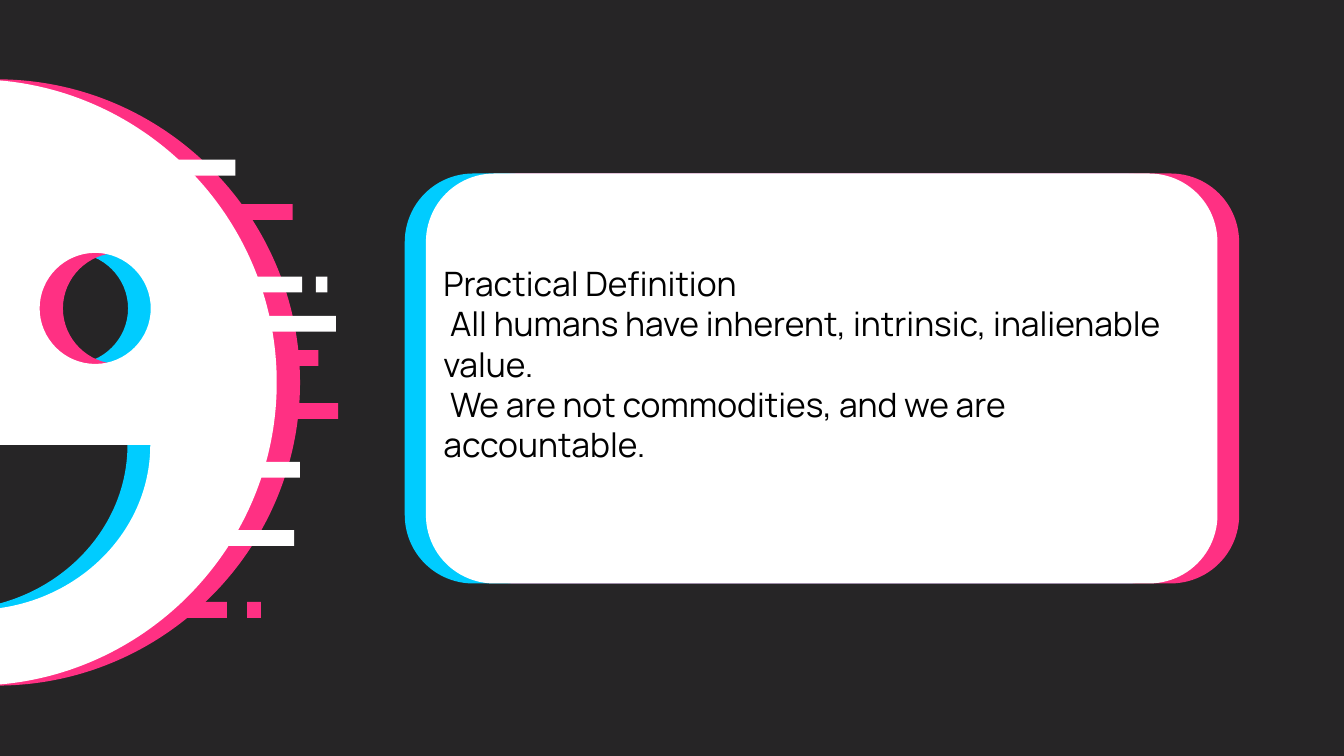
from pptx import Presentation
from pptx.dml.color import RGBColor
from pptx.enum.shapes import MSO_SHAPE
from pptx.enum.text import MSO_ANCHOR, MSO_AUTO_SIZE, PP_ALIGN
from pptx.oxml.ns import qn
from pptx.util import Cm, Pt

RECT = MSO_SHAPE.RECTANGLE
ROUND_RECT = MSO_SHAPE.ROUNDED_RECTANGLE
BOTTOM = MSO_ANCHOR.BOTTOM
NO_AUTOFIT = MSO_AUTO_SIZE.NONE
LEFT = PP_ALIGN.LEFT

THEME = {
    "background": RGBColor.from_string("262526"),
    "blue": RGBColor.from_string("00CCFF"),
    "pink": RGBColor.from_string("FF3083"),
    "white": RGBColor.from_string("FFFFFF"),
    "text": RGBColor.from_string("000000"),
    "font": "Manrope",
    "size": Pt(18),
}


def paint(sp, color):
    sp.shadow.inherit = False
    sp.fill.solid()
    sp.fill.fore_color.rgb = THEME[color]
    sp.line.fill.background()


def arc(cx, cy, rx, ry, quarters=4):
    k = 0.55
    x, y = 1, 0
    unit = [(x, y)]
    for _ in range(quarters):
        unit += [(x - k * y, y + k * x), (k * x - y, k * y + x), (-y, x)]
        x, y = -y, x
    return [(Cm(cx + rx * ux), Cm(cy + ry * uy)) for ux, uy in unit]


prs = Presentation()
prs.slide_width, prs.slide_height = Cm(25.4), Cm(14.29)
slide = prs.slides.add_slide(prs.slide_layouts[0])
slide.background.fill.solid()
slide.background.fill.fore_color.rgb = THEME["background"]
shapes = slide.shapes
title = shapes.title
title.element.getparent().remove(title.element)

for color, left in [("blue", 7.65), ("pink", 8.46), ("white", 8.05)]:
    sp = shapes.add_shape(ROUND_RECT, Cm(left), Cm(3.28), Cm(14.96), Cm(7.75))
    sp.adjustments[0] = 0.167
    paint(sp, color)

body = slide.placeholders[1]
shapes.element.append(body.element)
placement = {"left": Cm(8.13), "top": Cm(4.42), "width": Cm(14.81), "height": Cm(5.61)}
for name, value in placement.items():
    setattr(body, name, value)
tf = body.text_frame
frame_format = {
    "word_wrap": True,
    "auto_size": NO_AUTOFIT,
    "vertical_anchor": BOTTOM,
    "margin_left": Cm(0.25),
    "margin_right": Cm(0.25),
    "margin_top": Cm(0.25),
    "margin_bottom": Cm(1.25),
}
for name, value in frame_format.items():
    setattr(tf, name, value)
tf.text = (
    "Practical Definition\n"
    " All humans have inherent, intrinsic, inalienable value.\n"
    " We are not commodities, and we are accountable."
)
paragraph_format = {
    "alignment": LEFT,
    "line_spacing": 1.0,
    "space_before": Pt(0),
    "space_after": Pt(0),
}
for p in tf.paragraphs:
    for name, value in paragraph_format.items():
        setattr(p, name, value)
    for r in p.runs:
        r.font.name = THEME["font"]
        r.font.size = THEME["size"]
        r.font.color.rgb = THEME["text"]

glitch_bars = {
    "pink": [
        (3.3, 3.86, 2.23),
        (4.16, 7.62, 2.23),
        (2.06, 11.38, 2.23),
        (4.67, 11.38, 0.26),
        (3.79, 6.62, 2.23),
    ],
    "white": [
        (2.77, 3.02, 1.68),
        (3.99, 8.73, 1.68),
        (3.48, 10.02, 2.08),
        (4.27, 5.97, 2.08),
        (3.61, 5.23, 2.1),
        (5.97, 5.23, 0.22),
    ],
}
for color, cx in [("blue", -0.93), ("pink", -0.06), ("white", -0.5)]:
    if color == "white":
        for bar_color, bars in glitch_bars.items():
            for left, top, width in bars:
                sp = shapes.add_shape(RECT, Cm(left), Cm(top), Cm(width), Cm(0.3))
                paint(sp, bar_color)
    head = arc(cx, 7.23, 5.73, 5.73)
    eyes = [arc(cx + dx, 5.83, 1.05, 1.05) for dx in (-2.3, 2.3)]
    mouth = arc(cx, 8.41, 3.34, 3.12, quarters=2)
    builder = shapes.build_freeform(*head[0])
    builder.add_line_segments(head[1:])
    for hole in [*eyes, mouth]:
        builder.move_to(*hole[0])
        builder.add_line_segments(hole[1:])
    sp = builder.convert_to_shape()
    segments = list(sp.element.iter(qn("a:lnTo")))
    for i in range(0, len(segments), 3):
        curve = segments[i].makeelement(qn("a:cubicBezTo"))
        segments[i].addprevious(curve)
        for segment in segments[i : i + 3]:
            curve.append(segment[0])
            segment.getparent().remove(segment)
    paint(sp, color)

prs.save("out.pptx")
